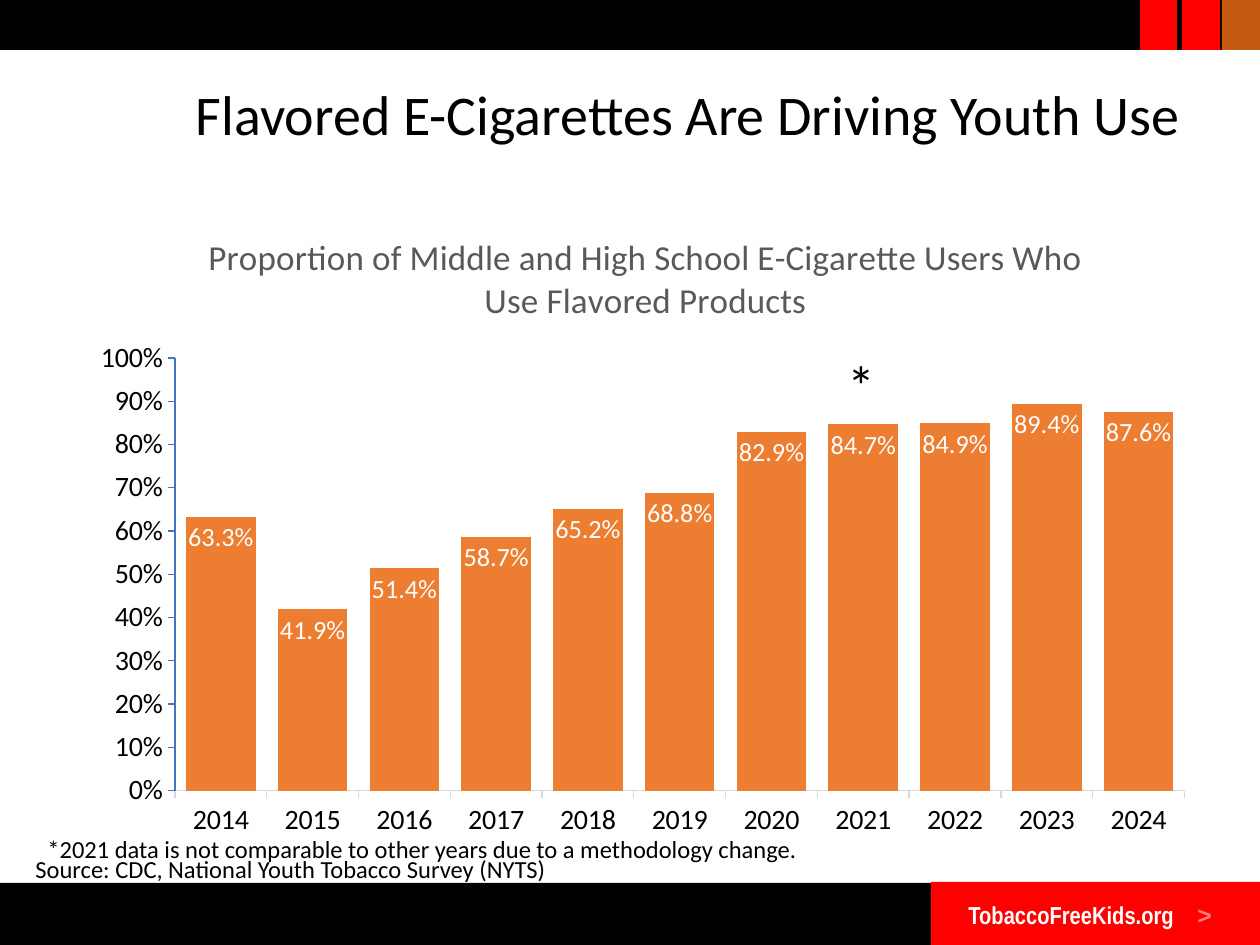
from lxml.etree import SubElement
from pptx import Presentation
from pptx.chart.data import CategoryChartData
from pptx.dml.color import RGBColor
from pptx.enum.chart import XL_CHART_TYPE, XL_LABEL_POSITION, XL_TICK_MARK
from pptx.enum.shapes import MSO_SHAPE
from pptx.enum.text import MSO_ANCHOR, PP_ALIGN
from pptx.oxml import parse_xml
from pptx.oxml.ns import nsdecls, qn
from pptx.util import Pt

PX = 914400 / 126


def place(*lengths):
    """Turn lengths in px into EMU."""
    return [round(length * PX) for length in lengths]


def style(font, size, color, name="Calibri", bold=False):
    font.size, font.name, font.bold = Pt(size), name, bold
    font.color.rgb = RGBColor.from_string(color)


presentation = Presentation()
presentation.slide_width, presentation.slide_height = place(1260, 945)
slide = presentation.slides.add_slide(presentation.slide_layouts[5])

# Header and footer bands
bands = [
    (0, 0, 1260, 50, "000000"),
    (1222, 0, 38, 50, "C55A11"),
    (1182, 0, 38, 50, "FF0000"),
    (1140, 0, 37, 50, "FF0000"),
    (0, 883, 1260, 62, "000000"),
    (931, 882, 329, 63, "FF0000"),
]
for left, top, width, height, color in bands:
    band = slide.shapes.add_shape(MSO_SHAPE.RECTANGLE, *place(left, top, width, height))
    band.shadow.inherit = False
    band.fill.solid()
    band.fill.fore_color.rgb = RGBColor.from_string(color)
    band.line.fill.background()

# Web address and arrow, parted by a tab stop
address = slide.shapes.add_textbox(*place(956, 893, 299, 43))
address.text_frame.word_wrap = True
address.text_frame.vertical_anchor = MSO_ANCHOR.MIDDLE
paragraph = address.text_frame.paragraphs[0]
tabs = SubElement(paragraph._p.get_or_add_pPr(), qn("a:tabLst"))
SubElement(tabs, qn("a:tab"), pos=str(place(229)[0]), algn="l")
for text, color, name in [
    ("TobaccoFreeKids.org", "FFFFFF", "Arial Narrow"),
    ("\t>", "FF7E79", "Arial"),
]:
    run = paragraph.add_run()
    run.text = text
    style(run.font, 14, color, name, bold=True)

# Title
title = slide.shapes.title
title.left, title.top, title.width, title.height = place(183, 55, 1051, 125)
title.text_frame.vertical_anchor = MSO_ANCHOR.MIDDLE
paragraph = title.text_frame.paragraphs[0]
paragraph.alignment = PP_ALIGN.LEFT
paragraph.line_spacing = 0.9
run = paragraph.add_run()
run.text = "Flavored E-Cigarettes Are Driving Youth Use"
style(run.font, 32, "000000")

# Chart
data = CategoryChartData(number_format="0.0%")
data.categories = [str(year) for year in range(2014, 2025)]
data.add_series("Series 1", [0.633, 0.419, 0.514, 0.587, 0.652, 0.688,
                             0.829, 0.847, 0.849, 0.894, 0.876])
chart = slide.shapes.add_chart(
    XL_CHART_TYPE.COLUMN_CLUSTERED, *place(78, 200, 1128, 650), data).chart
style(chart.font, 10, "000000")
chart.has_legend = False
chart.has_title = True
run = chart.chart_title.text_frame.paragraphs[0].add_run()
run.text = "Proportion of Middle and High School E-Cigarette Users Who Use Flavored Products"
style(run.font, 20, "595959")
chart.chart_title.include_in_layout = False

# Fixed places for the chart title and the plot, as fractions of the chart
title_layout = {"xMode": "edge", "yMode": "edge", "x": 0.11, "y": 0.04}
plot_layout = {"layoutTarget": "inner", "xMode": "edge", "yMode": "edge",
               "x": 0.086, "y": 0.243, "w": 0.895, "h": 0.666}
plot_area = chart._chartSpace.chart.plotArea
for old_layout in plot_area.findall(qn("c:layout")):
    plot_area.remove(old_layout)
title_element = chart.chart_title._element
for old_layout in title_element.findall(qn("c:layout")):
    title_element.remove(old_layout)
for parent, index, values in [(title_element, 1, title_layout), (plot_area, 0, plot_layout)]:
    layout = parse_xml(f"<c:layout {nsdecls('c')}><c:manualLayout/></c:layout>")
    for key, value in values.items():
        SubElement(layout[0], qn(f"c:{key}"), val=str(value))
    parent.insert(index, layout)

for axis, color in [(chart.category_axis, "D9D9D9"), (chart.value_axis, "4472C4")]:
    axis.has_major_gridlines = False
    axis.major_tick_mark = XL_TICK_MARK.OUTSIDE
    axis.minor_tick_mark = XL_TICK_MARK.NONE
    axis.format.line.color.rgb = RGBColor.from_string(color)
    axis.format.line.width = Pt(0.75)
    style(axis.tick_labels.font, 16, "000000")
chart.value_axis.minimum_scale = 0
chart.value_axis.maximum_scale = 1
chart.value_axis.major_unit = 0.1
chart.value_axis.tick_labels.number_format = "0%"
chart.value_axis.tick_labels.number_format_is_linked = False

plot = chart.plots[0]
plot.vary_by_categories = False
plot.gap_width = 32
plot.overlap = -20
series = plot.series[0]
series.format.fill.solid()
series.format.fill.fore_color.rgb = RGBColor.from_string("ED7D31")
labels = series.data_labels
labels.show_value = True
labels.position = XL_LABEL_POSITION.INSIDE_END
labels.number_format = "0.0%"
labels.number_format_is_linked = False
style(labels.font, 15, "FFFFFF")

# Source, asterisk over 2021 and its footnote
notes = [
    (23, 848, 546, 43, 14, False, "Source: CDC, National Youth Tobacco Survey (NYTS)"),
    (835, 344, 54, 81, 32, False, "*"),
    (35, 828, 1225, 43, 14, True,
     "*2021 data is not comparable to other years due to a methodology change."),
]
for left, top, width, height, size, wrap, text in notes:
    note = slide.shapes.add_textbox(*place(left, top, width, height))
    note.text_frame.word_wrap = wrap
    run = note.text_frame.paragraphs[0].add_run()
    run.text = text
    style(run.font, size, "000000")

presentation.save("out.pptx")
